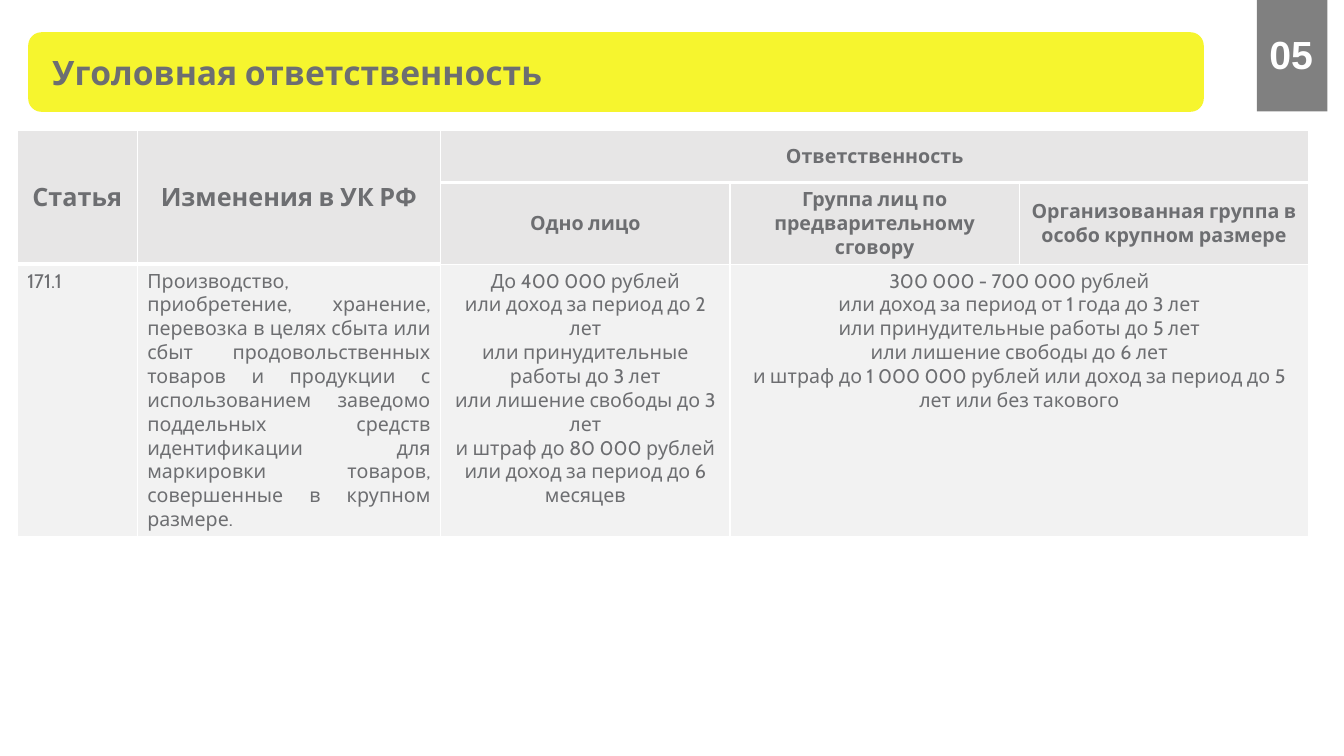
from lxml.etree import SubElement
from pptx import Presentation
from pptx.dml.color import RGBColor
from pptx.enum.shapes import MSO_SHAPE as Shape
from pptx.enum.text import MSO_ANCHOR as Anchor, PP_ALIGN as Align
from pptx.oxml.ns import qn
from pptx.util import Inches, Pt

WHITE = RGBColor(0xFF, 0xFF, 0xFF)
YELLOW = RGBColor(0xF6, 0xF5, 0x2E)
GRAY = RGBColor(0x80, 0x80, 0x80)
TEXT = RGBColor(0x6D, 0x6E, 0x71)
HEADER = RGBColor(0xE7, 0xE6, 0xE6)
BODY = RGBColor(0xF2, 0xF2, 0xF2)

presentation = Presentation()
presentation.slide_width, presentation.slide_height = Inches(13.33), Inches(7.5)
slide = presentation.slides.add_slide(presentation.slide_layouts[6])
COLUMN = presentation.slide_width / 100
ROW = presentation.slide_height / 100


def box(left, top, width, height):
    """Turn percentages of the slide into lengths."""
    return [int(share * unit) for share, unit in
            zip((left, top, width, height), (COLUMN, ROW, COLUMN, ROW))]


def write(text_frame, text, align, **font_format):
    """Fill the frame with one paragraph per line of text."""
    text_frame.text = text
    for paragraph in text_frame.paragraphs:
        paragraph.alignment = align
        for run in paragraph.runs:
            run.font.color.rgb = font_format["color"]
            for name in ("name", "size", "bold"):
                setattr(run.font, name, font_format[name])


# Table: (row, column, rows spanned, columns spanned, size, alignment, text)
CELLS = [
    (0, 0, 2, 1, 18, Align.CENTER, "Статья"),
    (0, 1, 2, 1, 18, Align.CENTER, "Изменения в УК РФ"),
    (0, 2, 1, 3, 14, Align.CENTER, "Ответственность"),
    (1, 2, 1, 1, 14, Align.CENTER, "Одно лицо"),
    (1, 3, 1, 1, 14, Align.CENTER, "Группа лиц по предварительному сговору"),
    (1, 4, 1, 1, 14, Align.CENTER, "Организованная группа в особо крупном размере"),
    (2, 0, 1, 1, 14, Align.JUSTIFY, "171.1"),
    (2, 1, 1, 1, 14, Align.JUSTIFY,
     "Производство, приобретение, хранение, перевозка в целях сбыта или сбыт "
     "продовольственных товаров и продукции с использованием заведомо поддельных "
     "средств идентификации для маркировки товаров, совершенные в крупном размере."),
    (2, 2, 1, 1, 14, Align.CENTER,
     "До 400 000 рублей\n"
     "или доход за период до 2 лет\n"
     "или принудительные работы до 3 лет\n"
     "или лишение свободы до 3 лет\n"
     "и штраф до 80 000 рублей или доход за период до 6 месяцев"),
    (2, 3, 1, 2, 14, Align.CENTER,
     "300 000 - 700 000 рублей\n"
     "или доход за период от 1 года до 3 лет\n"
     "или принудительные работы до 5 лет\n"
     "или лишение свободы до 6 лет\n"
     "и штраф до 1 000 000 рублей или доход за период до 5 лет или без такового"),
]
table_frame = slide.shapes.add_table(3, 5, *box(1.28, 17.2, 96.1, 47.73))
table = table_frame.table
table.first_row = table.horz_banding = False
for column, share in zip(table.columns, (8.93, 22.58, 21.53, 21.53, 21.53)):
    column.width = int(share * COLUMN)
for row, share in zip(table.rows, (6.93, 6.93, 21.47)):
    row.height = int(share * ROW)
table_frame.height = int(47.73 * ROW)

for row_index in range(3):
    for column_index in range(5):
        cell = table.cell(row_index, column_index)
        properties = cell._tc.get_or_add_tcPr()
        for side in ("lnL", "lnR", "lnT", "lnB"):
            points = 3 if side == "lnB" and row_index == 0 else 1
            border = SubElement(properties, qn(f"a:{side}"), w=str(Pt(points)))
            border_fill = SubElement(border, qn("a:solidFill"))
            SubElement(border_fill, qn("a:srgbClr"), val=str(WHITE))
        cell.fill.solid()
        cell.fill.fore_color.rgb = BODY if row_index == 2 else HEADER

for row_index, column_index, row_span, column_span, size, align, text in CELLS:
    cell = table.cell(row_index, column_index)
    if row_span * column_span > 1:
        cell.merge(table.cell(row_index + row_span - 1, column_index + column_span - 1))
    is_header = row_index < 2
    cell.vertical_anchor = Anchor.MIDDLE if is_header else Anchor.TOP
    write(cell.text_frame, text, align,
          name="Cabin", size=Pt(size), bold=is_header, color=TEXT)

# Title bar and page badge
title = slide.shapes.add_shape(Shape.ROUNDED_RECTANGLE, *box(2.1, 4.27, 87.47, 10.53))
badge = slide.shapes.add_shape(Shape.RECTANGLE, *box(91.97, 2.67, 8.33, 9.33))
badge.rotation = 90
for shape, color in ((title, YELLOW), (badge, GRAY)):
    shape.shadow.inherit = False
    shape.fill.solid()
    shape.fill.fore_color.rgb = color
    shape.line.fill.background()

number = slide.shapes.add_textbox(*box(94.45, 4, 3.6, 6.27))
for shape, margin in ((title, 0.2), (number, 0)):
    frame_format = {"word_wrap": True, "vertical_anchor": Anchor.MIDDLE}
    for side in ("left", "top", "right", "bottom"):
        frame_format[f"margin_{side}"] = Inches(margin)
    for name, value in frame_format.items():
        setattr(shape.text_frame, name, value)
write(title.text_frame, "Уголовная ответственность", Align.LEFT,
      name="Cabin", size=Pt(24), bold=True, color=TEXT)
write(number.text_frame, "05", Align.LEFT,
      name="Arial", size=Pt(28), bold=True, color=WHITE)

presentation.save("out.pptx")
